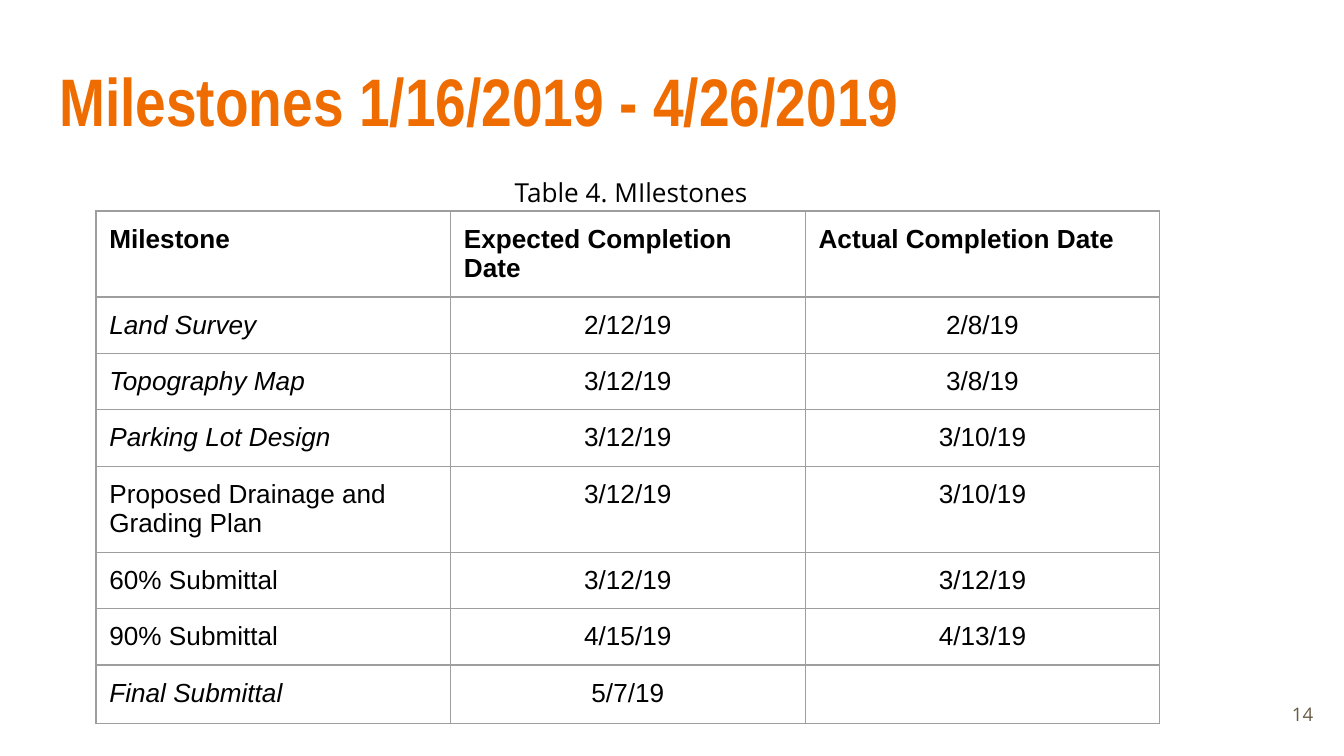
from lxml.etree import SubElement
from pptx import Presentation
from pptx.dml.color import RGBColor
from pptx.enum.text import MSO_ANCHOR as ANCHOR, PP_ALIGN as ALIGN
from pptx.oxml.ns import qn
from pptx.util import Pt

ORANGE = RGBColor(0xEF, 0x6C, 0x00)
BLACK = RGBColor(0, 0, 0)
BROWN = RGBColor(0x69, 0x5D, 0x46)
GRAY = RGBColor(0x9E, 0x9E, 0x9E)

# Content
TITLE = "Milestones 1/16/2019 - 4/26/2019"
CAPTION = "Table 4. MIlestones"
PAGE = "14"
HEADER = ("Milestone", "Expected Completion Date", "Actual Completion Date")
ROWS = [
    ("Land Survey", "2/12/19", "2/8/19"),
    ("Topography Map", "3/12/19", "3/8/19"),
    ("Parking Lot Design", "3/12/19", "3/10/19"),
    ("Proposed Drainage and Grading Plan", "3/12/19", "3/10/19"),
    ("60% Submittal", "3/12/19", "3/12/19"),
    ("90% Submittal", "4/15/19", "4/13/19"),
    ("Final Submittal", "5/7/19", ""),
]
ITALIC = {"Land Survey", "Topography Map", "Parking Lot Design", "Final Submittal"}

# Layout, in points
INSET = 7.2
TABLE_LEFT, TABLE_TOP, COL_W = 51.4, 113, 190
ROW_H, TALL_ROW_H = 30.2, 46.2
TALL_ROWS = {0, 4}

TITLE_FONT = dict(name="Arial Narrow", size=Pt(36), bold=True)
CELL_FONT = dict(name="Arial", size=Pt(14))
CAPTION_FONT = dict(name="Open Sans", size=Pt(14))
PAGE_FONT = dict(name="Open Sans", size=Pt(10))


def write(tf, text, font, color, align=ALIGN.LEFT):
    p = tf.paragraphs[0]
    p.alignment = align
    if not text:
        SubElement(p._p, qn("a:endParaRPr"), sz=str(int(font["size"].pt * 100)))
        return
    r = p.add_run()
    r.text = text
    for key, value in font.items():
        setattr(r.font, key, value)
    r.font.color.rgb = color


def set_frame(sp, box, anchor=ANCHOR.TOP):
    sp.left, sp.top, sp.width, sp.height = map(Pt, box)
    tf = sp.text_frame
    tf.word_wrap = True
    tf.vertical_anchor = anchor
    for side in ("left", "top", "right", "bottom"):
        setattr(tf, f"margin_{side}", Pt(INSET))
    return tf


def add_borders(cell):
    tc_pr = cell._tc.get_or_add_tcPr()
    for side in ("lnL", "lnR", "lnT", "lnB"):
        ln = SubElement(tc_pr, qn(f"a:{side}"), w=str(Pt(0.75)))
        fill = SubElement(ln, qn("a:solidFill"))
        SubElement(fill, qn("a:srgbClr"), val=str(GRAY))


prs = Presentation()
prs.slide_width, prs.slide_height = Pt(720), Pt(405)
s = prs.slides.add_slide(prs.slide_layouts[5])

# Title
write(set_frame(s.shapes.title, (24.5, 24.5, 671, 55.5)), TITLE, TITLE_FONT, ORANGE)

# Milestone table
grid = [HEADER] + ROWS
heights = [TALL_ROW_H if i in TALL_ROWS else ROW_H for i in range(len(grid))]
table = s.shapes.add_table(
    len(grid), len(HEADER), Pt(TABLE_LEFT), Pt(TABLE_TOP),
    Pt(COL_W * len(HEADER)), Pt(sum(heights))).table
table.horz_banding = False
for col in table.columns:
    col.width = Pt(COL_W)
for i, (row, height) in enumerate(zip(grid, heights)):
    table.rows[i].height = Pt(height)
    for j, text in enumerate(row):
        cell = table.cell(i, j)
        for side in ("left", "top", "right", "bottom"):
            setattr(cell, f"margin_{side}", Pt(INSET))
        add_borders(cell)
        cell.fill.background()
        font = dict(CELL_FONT, bold=i == 0, italic=text in ITALIC)
        align = ALIGN.CENTER if i and j else ALIGN.LEFT
        write(cell.text_frame, text, font, BLACK, align)

# Caption and page number
caption = s.shapes.add_textbox(0, 0, 0, 0)
write(set_frame(caption, (268.6, 87.1, 251, 19)), CAPTION, CAPTION_FONT, BLACK)
page = s.shapes.add_textbox(0, 0, 0, 0)
write(set_frame(page, (667.4, 367.2, 43.2, 31), ANCHOR.MIDDLE),
      PAGE, PAGE_FONT, BROWN, ALIGN.RIGHT)

prs.save("out.pptx")
